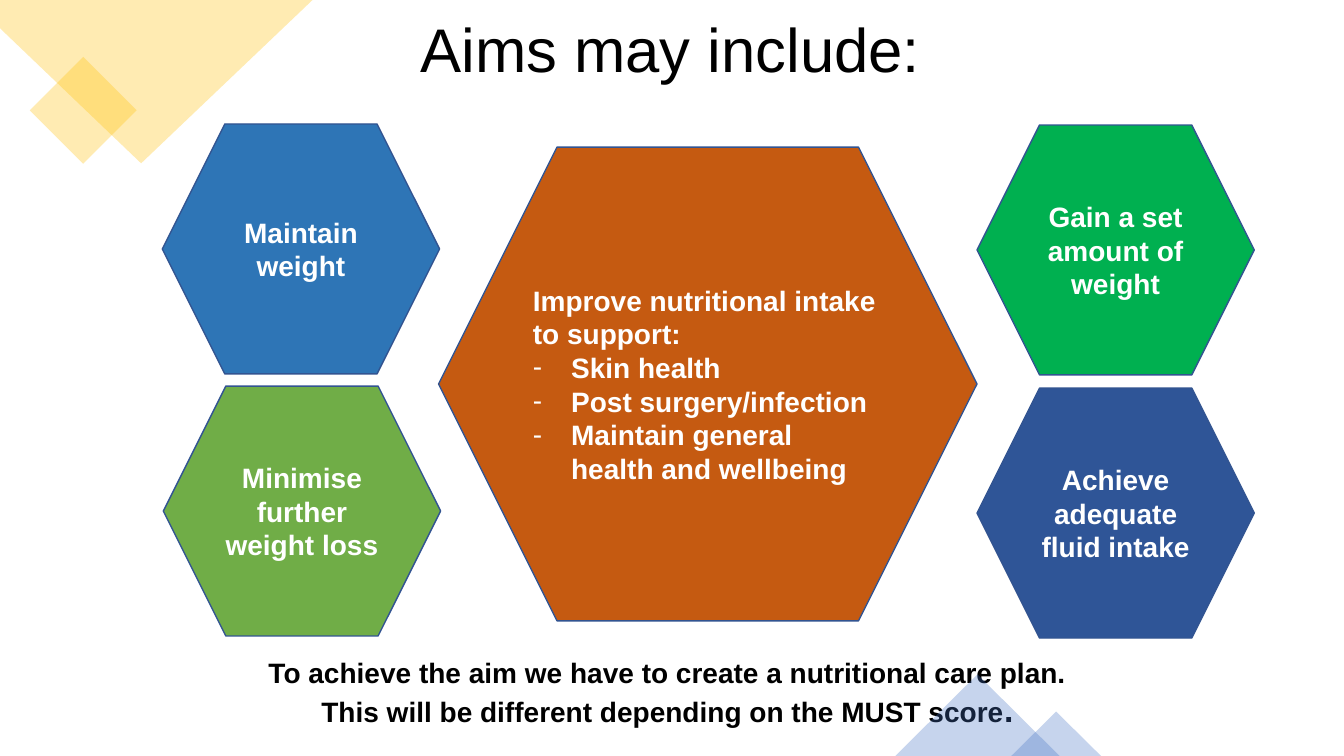
"""Build the slide of nutritional care aims with five hexagons."""
import pptx
import pptx.dml.color
import pptx.enum.shapes
import pptx.enum.text
import pptx.oxml.ns
import pptx.util
from lxml import etree

Inches, Pt = pptx.util.Inches, pptx.util.Pt
SHAPES = pptx.enum.shapes.MSO_SHAPE
ALIGN = pptx.enum.text.PP_ALIGN
MIDDLE = pptx.enum.text.MSO_ANCHOR.MIDDLE

HEADING = "Aims may include:"
CONCLUSION = [
    [("To achieve the aim we have to create a nutritional care plan.", 20)],
    [("This will be different depending on the MUST score", 20), (".", 24)],
]
SMALL_AIMS = [
    ("Maintain weight", 1.61, 1.23, "2E75B6"),
    ("Minimise further weight loss", 1.62, 3.83, "70AD47"),
    ("Gain a set amount of weight", 9.69, 1.24, "00B050"),
    ("Achieve adequate fluid intake", 9.69, 3.85, "2F5597"),
]
SMALL_SIZE = (2.75, 2.48)
MAIN_AIM = "Improve nutritional intake to support:"
SUPPORTED = ["Skin health", "Post surgery/infection", "Maintain general health and wellbeing"]
MAIN_BOX = (4.35, 1.46, 5.34, 4.7)
CORNER = [(0, 0), (3.1, 0), (1.4, 1.62), (0, 0.28)]
ACCENTS = [
    (SHAPES.RECTANGLE, (0.45, 0.72, 0.75, 0.75), 45, "FFC000"),
    (SHAPES.ISOSCELES_TRIANGLE, (10.03, 7.06, 0.89, 0.44), 0, "4472C4"),
    (SHAPES.ISOSCELES_TRIANGLE, (8.88, 6.69, 1.63, 0.81), 0, "4472C4"),
]
OUTLINE = "325491"
DASH_INDENT = 0.38


def rgb(value):
    return pptx.dml.color.RGBColor.from_string(value)


def add_child(parent, tag, **attributes):
    return etree.SubElement(parent, pptx.oxml.ns.qn(tag), attributes)


def write(paragraph, words, size=20, color="FFFFFF", bold=True, align=ALIGN.CENTER):
    paragraph.alignment = align
    run = paragraph.add_run()
    run.text = words
    run.font.color.rgb = rgb(color)
    for name, value in {"name": "Arial", "size": Pt(size), "bold": bold}.items():
        setattr(run.font, name, value)


def paint_accent(accent, color):
    accent.shadow.inherit = False
    accent.fill.solid()
    accent.fill.fore_color.rgb = rgb(color)
    add_child(accent.fill._xPr.find(".//" + pptx.oxml.ns.qn("a:srgbClr")), "a:alpha", val="30000")
    accent.line.fill.background()


def add_hexagon(slide, box, color):
    hexagon = slide.shapes.add_shape(SHAPES.HEXAGON, *map(Inches, box))
    hexagon.shadow.inherit = False
    hexagon.fill.solid()
    hexagon.fill.fore_color.rgb = rgb(color)
    hexagon.line.color.rgb = rgb(OUTLINE)
    hexagon.line.width = Pt(1)
    hexagon.text_frame.word_wrap = True
    hexagon.text_frame.vertical_anchor = MIDDLE
    return hexagon.text_frame


def add_dash(paragraph):
    properties = paragraph._p.get_or_add_pPr()
    indent = Inches(DASH_INDENT)
    properties.set("marL", str(indent))
    properties.set("indent", str(-indent))
    add_child(properties, "a:buFont", typeface="Arial")
    add_child(properties, "a:buChar", char="-")


deck = pptx.Presentation()
deck.slide_width, deck.slide_height = Inches(13.33), Inches(7.5)
slide = deck.slides.add_slide(deck.slide_layouts[5])

title = slide.shapes.title
for side, length in zip(("left", "top", "width", "height"), (4.07, -0.19, 8.5, 1.42)):
    setattr(title, side, Inches(length))
title.text_frame.vertical_anchor = MIDDLE
title.text_frame.auto_size = pptx.enum.text.MSO_AUTO_SIZE.NONE
heading = title.text_frame.paragraphs[0]
heading.line_spacing = 0.9
write(heading, HEADING, 44, "000000", False, ALIGN.LEFT)

conclusion = slide.shapes.add_textbox(*map(Inches, (2.37, 6.45, 8.5, 0.84))).text_frame
conclusion.word_wrap = True
for index, pieces in enumerate(CONCLUSION):
    sentence = conclusion.add_paragraph() if index else conclusion.paragraphs[0]
    for words, size in pieces:
        write(sentence, words, size, "000000")

outline = slide.shapes.build_freeform(*map(Inches, CORNER[0]))
outline.add_line_segments([tuple(map(Inches, point)) for point in CORNER[1:]], close=True)
paint_accent(outline.convert_to_shape(), "FFC000")
for kind, box, rotation, color in ACCENTS:
    accent = slide.shapes.add_shape(kind, *map(Inches, box))
    accent.rotation = rotation
    paint_accent(accent, color)

for aim, left, top, color in SMALL_AIMS:
    write(add_hexagon(slide, (left, top, *SMALL_SIZE), color).paragraphs[0], aim)

main = add_hexagon(slide, MAIN_BOX, "C55A11")
write(main.paragraphs[0], MAIN_AIM, align=ALIGN.LEFT)
for benefit in SUPPORTED:
    item = main.add_paragraph()
    write(item, benefit, align=ALIGN.LEFT)
    add_dash(item)

deck.save("out.pptx")
